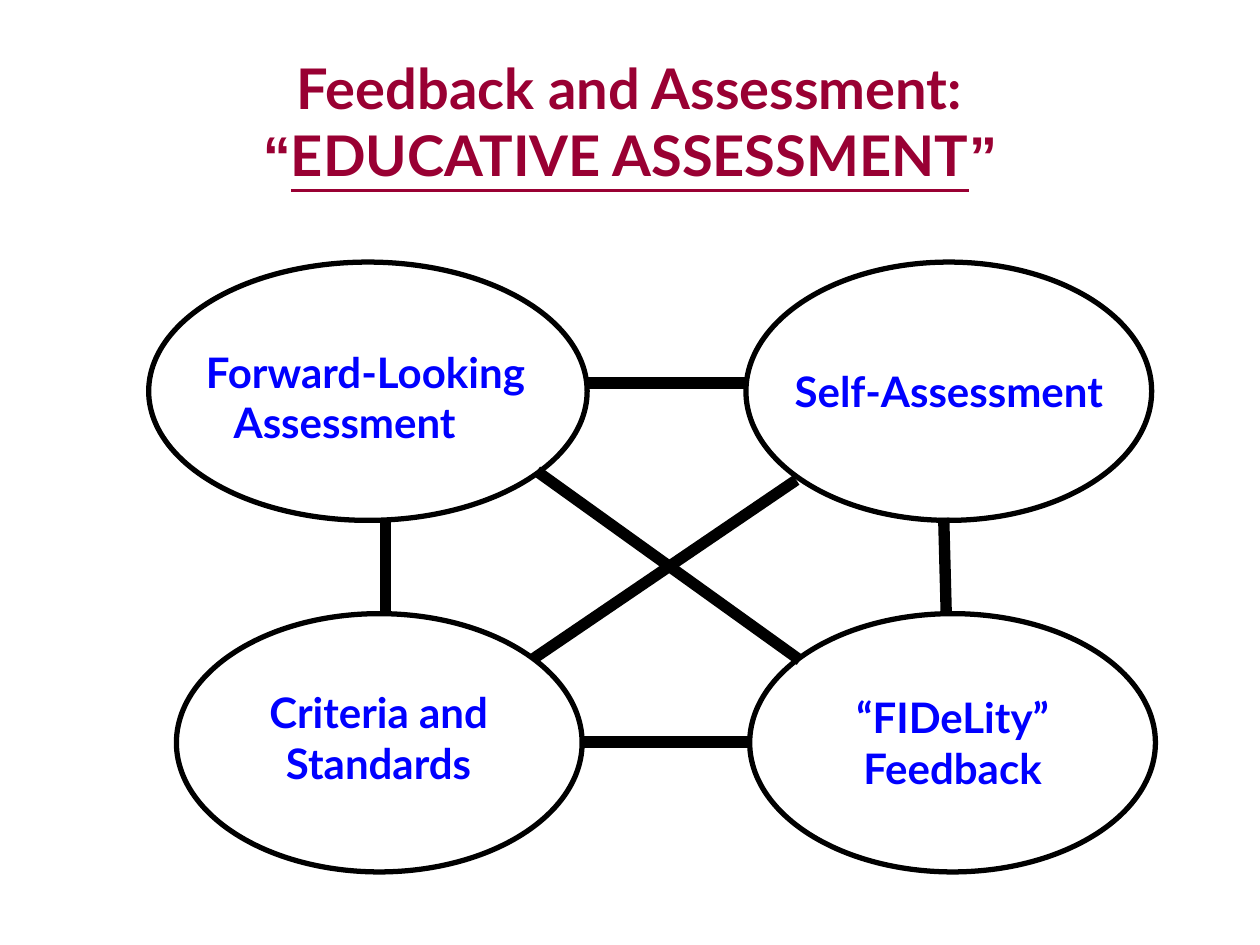
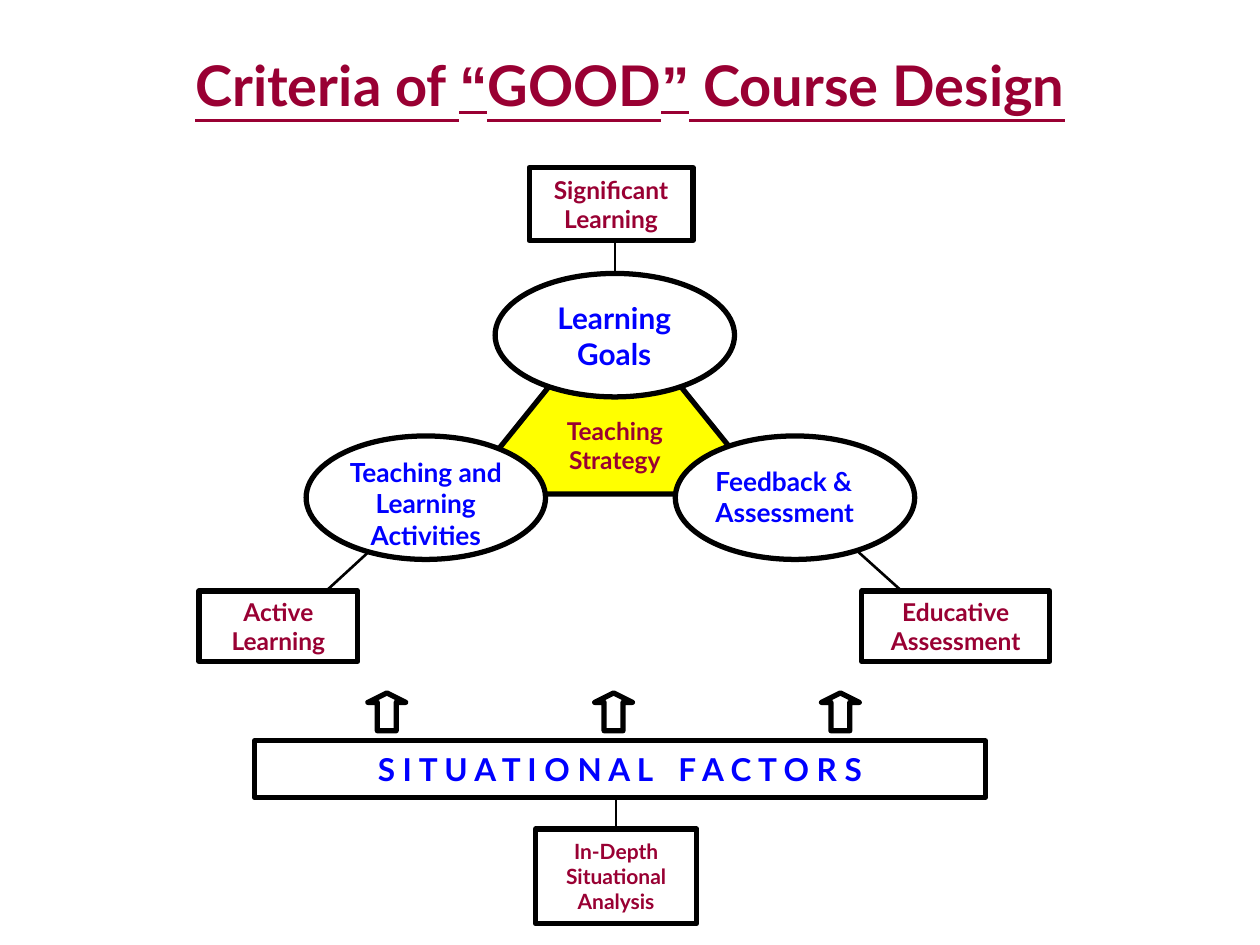
from lxml import etree
from pptx import Presentation
from pptx.dml.color import RGBColor
from pptx.enum import shapes, text
from pptx.oxml import ns
from pptx.util import Inches, Pt

BLACK = RGBColor(0x00, 0x00, 0x00)
WHITE = RGBColor(0xFF, 0xFF, 0xFF)
YELLOW = RGBColor(0xFF, 0xFF, 0x00)
BLUE = RGBColor(0x00, 0x00, 0xFF)
MAROON = RGBColor(0x99, 0x00, 0x33)
FONT, QUOTE_FONT = "Lato", "Arial"
OUTLINE = 3
SHAPE = shapes.MSO_SHAPE
CENTER, LEFT = text.PP_ALIGN.CENTER, text.PP_ALIGN.LEFT
TOP, MIDDLE = text.MSO_ANCHOR.TOP, text.MSO_ANCHOR.MIDDLE


def inches(box):
    return [Inches(v) for v in box]


def style_run(r, size, color, font=FONT):
    r.font.size, r.font.bold, r.font.name = Pt(size), True, font
    r.font.color.rgb = color


def write(sp, lines, size, color, align=CENTER, anchor=TOP, inset=None):
    """Fill a shape with one paragraph per line."""
    tf = sp.text_frame
    tf.word_wrap, tf.vertical_anchor = True, anchor
    if inset is not None:
        tf.margin_left = tf.margin_right = Inches(inset)
        tf.margin_top = tf.margin_bottom = Inches(inset)
    tf.text = "\n".join(lines)
    for p in tf.paragraphs:
        p.alignment = align
        for r in p.runs:
            style_run(r, size, color)
    return tf


def add_label(parent, box, lines, size, color=BLUE, **options):
    return write(parent.add_textbox(*inches(box)), lines, size, color, **options)


def add_outlined(parent, kind, box, fill=WHITE):
    sp = parent.add_shape(kind, *inches(box))
    sp.shadow.inherit = False
    sp.fill.solid()
    sp.fill.fore_color.rgb = fill
    sp.line.color.rgb, sp.line.width = BLACK, Pt(OUTLINE)
    return sp


def add_box(slide, box, lines, size, color=MAROON):
    sp = add_outlined(slide.shapes, SHAPE.RECTANGLE, box)
    write(sp, lines, size, color, anchor=MIDDLE)
    return sp


def add_node(slide, oval, label_box, lines, size, **options):
    """Ellipse grouped with its label; the label box is relative to the ellipse."""
    group = slide.shapes.add_group_shape().shapes
    add_outlined(group, SHAPE.OVAL, oval)
    dx, dy, width, height = label_box
    box = (oval[0] + dx, oval[1] + dy, width, height)
    return add_label(group, box, lines, size, **options)


def add_line(slide, start, end, width):
    line = slide.shapes.add_connector(
        shapes.MSO_CONNECTOR.STRAIGHT, *inches(start), *inches(end))
    line.line.color.rgb, line.line.width = BLACK, Pt(width)
    etree.SubElement(line._element.spPr, ns.qn("a:effectLst"))
    return line


def add_title(slide, box, lines):
    """Each line is a list of (text, underlined) pieces."""
    tf = slide.shapes.add_textbox(*inches(box)).text_frame
    tf.word_wrap, tf.vertical_anchor = True, MIDDLE
    p = tf.paragraphs[0]
    p.alignment = CENTER
    for i, pieces in enumerate(lines):
        if i:
            p.add_line_break()
        for piece, underlined in pieces:
            r = p.add_run()
            r.text = piece
            style_run(r, 32, MAROON, QUOTE_FONT if piece in "“”" else FONT)
            r.font.underline = underlined


def educative_assessment(slide):
    add_title(slide, (0.5, 0.33, 9, 1.25), [
        [("Feedback and Assessment:", False)],
        [("“", False), ("EDUCATIVE ASSESSMENT", True), ("”", False)]])

    # Four elements
    forward = add_node(slide, (1.18, 2.08, 3.48, 2.05), (-0.1, 0.67, 3.31, 0.83),
                       ["Forward-Looking", "Assessment"], 24, inset=0)
    forward.paragraphs[0]._p.get_or_add_pPr().set("marL", str(Inches(0.33)))
    for oval, label_box, label in [
            ((5.92, 2.08, 3.22, 2.05), (0.1, 0.82, 3.02, 0.42), "Self-Assessment"),
            ((1.4, 4.87, 3.22, 2.05), (0.35, 0.58, 2.51, 0.91), "Criteria and Standards"),
            ((5.95, 4.87, 3.22, 2.05), (0.48, 0.62, 2.26, 0.8), "“FIDeLity” Feedback")]:
        add_node(slide, oval, label_box, [label], 24, inset=0)

    # Every element is tied to the other three
    for start, end in [((4.66, 3.04), (5.93, 3.04)), ((4.6, 5.89), (5.95, 5.89)),
                       ((3.06, 4.11), (3.06, 4.86)), ((7.49, 4.11), (7.51, 4.87)),
                       ((4.26, 3.74), (6.35, 5.24)), ((4.23, 5.23), (6.32, 3.81))]:
        add_line(slide, start, end, 6.5)


def design_triangle(slide):
    """Teaching strategy with the three components at its corners."""
    add_outlined(slide.shapes, SHAPE.ISOSCELES_TRIANGLE,
                 (3.67, 2.42, 2.42, 1.5), YELLOW)
    add_label(slide.shapes, (4.17, 3.25, 1.42, 0.57), ["Teaching Strategy"], 14, MAROON)

    # Criteria boxes on their lines
    for start, end, box, lines in [
            ((4.88, 2.17), (4.88, 1.87), (4.2, 1.33, 1.3, 0.58), ["Significant", "Learning"]),
            ((6.8, 4.37), (7.3, 4.82), (6.84, 4.69, 1.49, 0.56), ["Educative", "Assessment"]),
            ((2.97, 4.34), (2.48, 4.79), (1.58, 4.69, 1.26, 0.56), ["Active", "Learning"])]:
        add_line(slide, start, end, 1.5)
        add_box(slide, box, lines, 14)

    # Course components
    for corner, label_box, lines, size, align in [
            ((3.93, 2.17), (0.27, 0.16, 1.35, 0.54), ["Learning Goals"], 17, CENTER),
            ((5.36, 3.46), (0.22, 0.18, 1.5, 0.53), ["Feedback &", "Assessment"], 15, LEFT),
            ((2.43, 3.46), (0.1, 0.11, 1.7, 0.68),
             ["Teaching and", "Learning", "Activities"], 15, CENTER)]:
        add_node(slide, (*corner, 1.9, 0.98), label_box, lines, size, align=align)


def situational_factors(slide):
    """Bar that feeds the design through three arrows."""
    bar = add_box(slide, (2.02, 5.88, 5.8, 0.45), [""], 18, BLUE)
    p = bar.text_frame.paragraphs[0]
    for piece in (" ".join("SITUATIONAL"), " ", " ".join("FACTORS")):
        r = p.add_run()
        r.text = piece
        style_run(r, 18, BLUE)
    p.runs[1].font._element.set("spc", "1000")  # wider gap between the words

    for i in range(3):
        arrow = add_outlined(slide.shapes, SHAPE.UP_ARROW, (2.92 + 1.8 * i, 5.5, 0.3, 0.3))
        arrow.adjustments[1] = 0.25

    analysis = add_box(slide, (4.25, 6.58, 1.28, 0.75), ["In-Depth Situational Analysis"], 12)
    add_line(slide, (4.89, 6.33), (4.89, 6.58), 0.75).end_connect(analysis, 0)


def good_course_design(slide):
    add_title(slide, (1.06, 0.33, 7.88, 0.67), [
        [(piece, True) for piece in ("Criteria of ", "“", "GOOD", "”", " Course Design")]])
    design_triangle(slide)
    situational_factors(slide)


def main():
    prs = Presentation()
    prs.slide_width, prs.slide_height = Inches(10), Inches(7.5)
    for build in (educative_assessment, good_course_design):
        build(prs.slides.add_slide(prs.slide_layouts[6]))
    prs.save("out.pptx")


if __name__ == "__main__":
    main()
